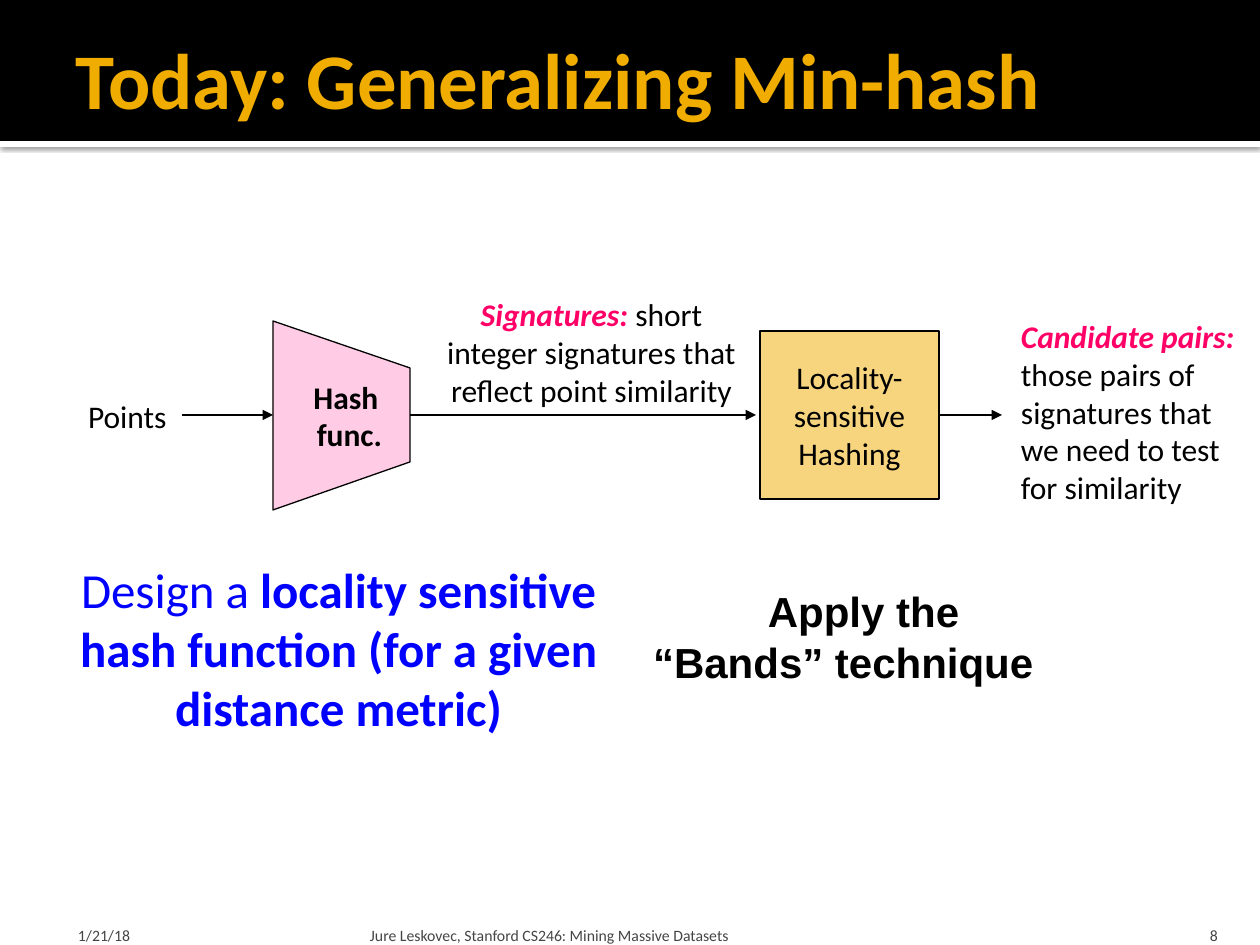
"""Build the slide on generalizing min-hash with its hashing pipeline."""
from dataclasses import dataclass

import pptx
import pptx.dml.color
import pptx.enum.shapes
import pptx.enum.text
import pptx.oxml
import pptx.oxml.ns
import pptx.util

SCALE = 914400 / 126
COLOURS = {"black": "000000", "white": "FFFFFF", "gold": "F0AD00", "pink": "FF99CC",
           "magenta": "FF0066", "blue": "0000FF", "grey": "454545"}
LEFT, CENTER, RIGHT = (pptx.enum.text.PP_ALIGN.LEFT, pptx.enum.text.PP_ALIGN.CENTER,
                       pptx.enum.text.PP_ALIGN.RIGHT)
TOP, MIDDLE, BOTTOM = (pptx.enum.text.MSO_ANCHOR.TOP, pptx.enum.text.MSO_ANCHOR.MIDDLE,
                       pptx.enum.text.MSO_ANCHOR.BOTTOM)
FLOW_Y = 415


@dataclass(frozen=True)
class Run:
    text: str
    colour: str = "black"
    size: int = 18
    bold: bool = False
    italic: bool = False
    font: str = "Calibri"


@dataclass(frozen=True)
class Paragraph:
    runs: tuple[Run, ...]
    align: int = LEFT


@dataclass(frozen=True)
class Label:
    box: tuple[int, int, int, int]
    paragraphs: tuple[Paragraph, ...]
    anchor: int = TOP
    insets: tuple[int, int, int, int] = (13, 6, 13, 6)
    wrap: bool = True


def emu(px: int) -> int:
    return round(px * SCALE)


def rgb(colour: str) -> pptx.dml.color.RGBColor:
    return pptx.dml.color.RGBColor.from_string(COLOURS[colour])


def element(inner: str):
    namespace = pptx.oxml.ns.nsdecls("a")
    tag, rest = inner[1:].split(" ", 1)
    return pptx.oxml.parse_xml(f"<{tag} {namespace} {rest}")


def write(frame, paragraphs, anchor=TOP, insets=(13, 6, 13, 6), wrap=True) -> None:
    left, top, right, bottom = map(emu, insets)
    layout = {"word_wrap": wrap, "vertical_anchor": anchor, "margin_left": left,
              "margin_top": top, "margin_right": right, "margin_bottom": bottom}
    for name, value in layout.items():
        setattr(frame, name, value)
    for index, content in enumerate(paragraphs):
        paragraph = frame.add_paragraph() if index else frame.paragraphs[0]
        paragraph.alignment = content.align
        for part in content.runs:
            for line_index, line in enumerate(part.text.split("\n")):
                if line_index:
                    paragraph.add_line_break()
                run = paragraph.add_run()
                run.text = line
                style = {"name": part.font, "size": pptx.util.Pt(part.size),
                         "bold": part.bold, "italic": part.italic}
                for name, value in style.items():
                    setattr(run.font, name, value)
                run.font.color.rgb = rgb(part.colour)


def add_label(shapes, label: Label) -> None:
    textbox = shapes.add_textbox(*map(emu, label.box))
    write(textbox.text_frame, label.paragraphs, label.anchor, label.insets, label.wrap)


def paint(shape, colour: str, alpha: int = 100, outlined: bool = False) -> None:
    shape.shadow.inherit = False
    shape.fill.solid()
    shape.fill.fore_color.rgb = rgb(colour)
    if alpha < 100:
        shape.fill._xPr.find(".//" + pptx.oxml.ns.qn("a:srgbClr")).append(
            element(f'<a:alpha val="{alpha * 1000}"/>'))
    if outlined:
        shape.line.color.rgb = rgb("black")
        shape.line.width = pptx.util.Pt(0.75)
    else:
        shape.line.fill.background()


def add_box(shapes, box: tuple[int, int, int, int], colour: str, alpha: int = 100,
            outlined: bool = False):
    rectangle = shapes.add_shape(pptx.enum.shapes.MSO_SHAPE.RECTANGLE, *map(emu, box))
    paint(rectangle, colour, alpha, outlined)
    return rectangle


def add_arrow(shapes, start: int, end: int):
    arrow = shapes.add_connector(pptx.enum.shapes.MSO_CONNECTOR.STRAIGHT,
                                 emu(start), emu(FLOW_Y), emu(end), emu(FLOW_Y))
    arrow.line.color.rgb = rgb("black")
    arrow.line.width = pptx.util.Pt(0.75)
    arrow.line._get_or_add_ln().append(element('<a:tailEnd type="triangle"/>'))
    arrow._element.spPr.append(element('<a:effectLst />'))
    return arrow


def footer(text: str, left: int, width: int, inset: int, align: int = LEFT) -> Label:
    return Label((left, 907, width, 38), (Paragraph((Run(text, "grey", 9),), align),),
                 BOTTOM, (inset, 6, 13 if align == RIGHT else 6, 0))


LABELS = (
    footer("1/21/18", 63, 294, 15),
    footer("Jure Leskovec, Stanford CS246: Mining Massive Datasets", 364, 759, 6),
    footer("8", 1130, 101, 13, RIGHT),
    Label((75, 391, 107, 50), (Paragraph((Run("Points"),)),), wrap=False),
    Label((431, 289, 321, 127), (Paragraph((
        Run("Signatures:", "magenta", bold=True, italic=True),
        Run(" short integer signatures that reflect point similarity")), CENTER),)),
    Label((1008, 311, 252, 204), (
        Paragraph((Run("Candidate pairs:", "magenta", bold=True, italic=True),)),
        Paragraph((Run("those pairs of signatures that we need to test for similarity"),)))),
    Label((37, 554, 603, 190), (Paragraph((
        Run("Design a ", "blue", 28),
        Run("locality sensitive\nhash function (for a given\ndistance metric)",
            "blue", 28, True)), CENTER),)),
    Label((640, 580, 447, 115), (
        Paragraph((Run("Apply the", size=24, bold=True, font="Arial"),), CENTER),
        Paragraph((Run("“Bands” technique", size=24, bold=True, font="Arial"),)))),
)


def main() -> None:
    deck = pptx.Presentation()
    deck.slide_width, deck.slide_height = emu(1260), emu(945)
    slide = deck.slides.add_slide(deck.slide_layouts[5])
    shapes = slide.shapes

    strip = add_box(shapes, (0, 141, 1260, 6), "white")
    strip._element.spPr.find(pptx.oxml.ns.qn("a:effectLst")).append(element(
        '<a:outerShdw blurRad="31750" dist="10160" dir="5400000" rotWithShape="0">'
        '<a:srgbClr val="000000"><a:alpha val="60000"/></a:srgbClr></a:outerShdw>'))
    add_box(shapes, (0, 0, 1260, 141), "black")

    title = shapes.title
    place = dict(zip(("left", "top", "width", "height"), map(emu, (63, 10, 1134, 136))))
    for name, value in place.items():
        setattr(title, name, value)
    write(title.text_frame,
          (Paragraph((Run("Today: Generalizing Min-hash", "gold", 45, True),)),),
          MIDDLE, (13, 6, 6, 6))
    strip._element.getparent().append(title._element)

    outline = shapes.build_freeform(273, 510, scale=SCALE)
    outline.add_line_segments([(410, 462), (410, 368), (273, 321)], close=True)
    hash_function = outline.convert_to_shape()
    paint(hash_function, "pink", 50, True)
    write(hash_function.text_frame,
          (Paragraph((Run("Hash \nfunc.", bold=True),), CENTER),),
          MIDDLE, (29, 6, 13, 6), False)

    hashing = add_box(shapes, (760, 331, 179, 168), "gold", 50, True)
    write(hashing.text_frame,
          [Paragraph((Run(line),), CENTER) for line in ("Locality-", "sensitive", "Hashing")],
          MIDDLE, wrap=False)

    add_arrow(shapes, 182, 273)
    add_arrow(shapes, 410, 756)
    add_arrow(shapes, 939, 1002).begin_connect(hashing, 3)

    for label in LABELS:
        add_label(shapes, label)
    deck.save("out.pptx")


if __name__ == "__main__":
    main()
